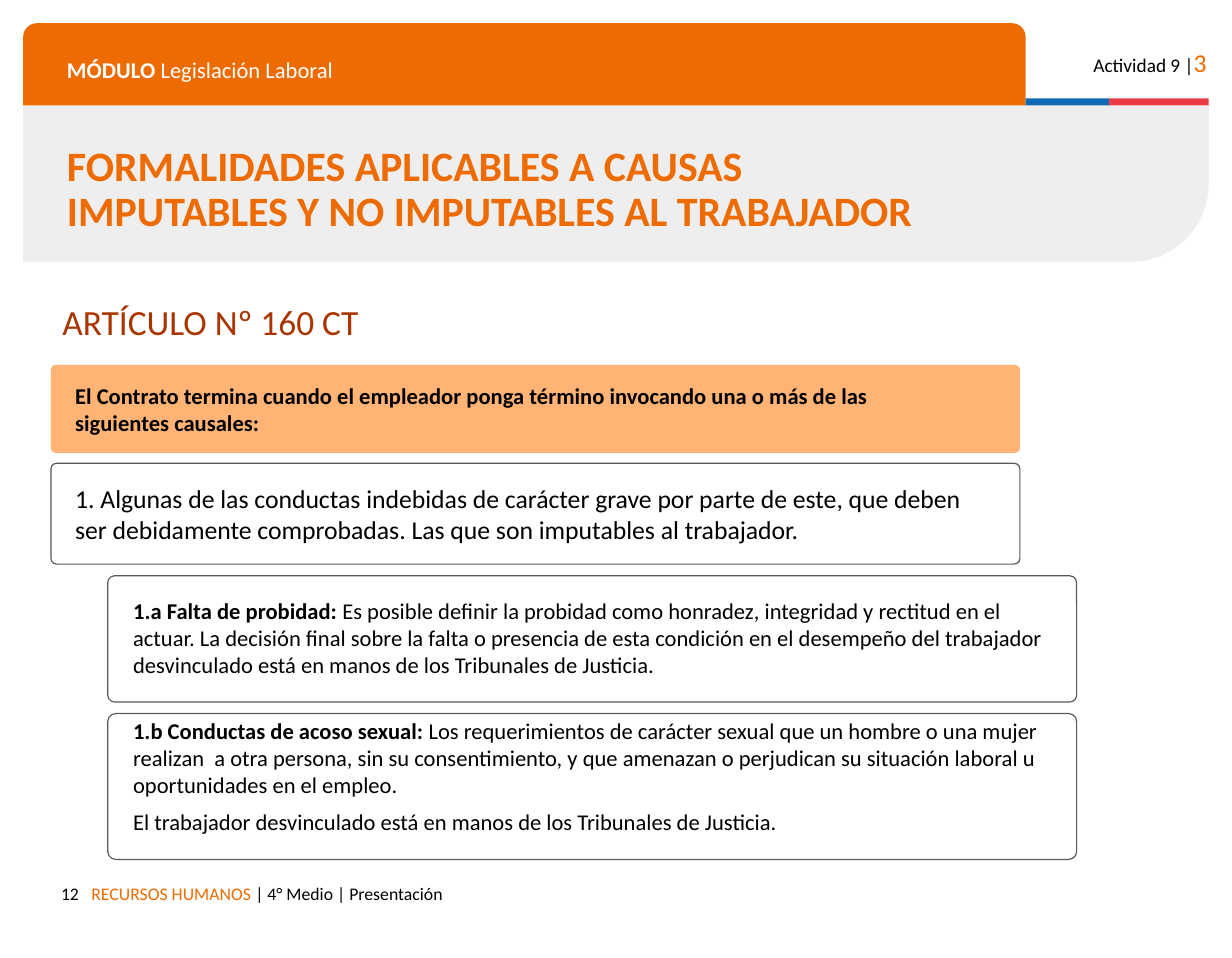
from dataclasses import dataclass

from pptx import Presentation
from pptx.dml.color import RGBColor
from pptx.enum.shapes import MSO_SHAPE
from pptx.enum.text import MSO_ANCHOR, PP_ALIGN
from pptx.util import Inches, Pt

RECT = MSO_SHAPE.RECTANGLE
ROUND = MSO_SHAPE.ROUNDED_RECTANGLE
ROUND_ONE = MSO_SHAPE.ROUND_1_RECTANGLE
ROUND_TOP = MSO_SHAPE.ROUND_2_SAME_RECTANGLE
LEFT, RIGHT = PP_ALIGN.LEFT, PP_ALIGN.RIGHT
TOP, MIDDLE = MSO_ANCHOR.TOP, MSO_ANCHOR.MIDDLE

FONT = "Calibri"
ORANGE, PEACH, BROWN = "ED6B00", "FFB375", "A93501"
BLUE, RED = "0F69B4", "EB3C46"
BLACK, WHITE, GRAY, PALE = "000000", "FFFFFF", "595959", "EEEEEE"
CARD_WIDTH, CARD_ROUNDING = 8.36, 0.055


@dataclass
class Panel:
    kind: MSO_SHAPE
    x: float
    y: float
    w: float
    h: float
    fill: str | None = None
    line: str | None = None
    adj: tuple[float, ...] = ()


@dataclass
class Run:
    text: str
    size: float
    color: str = BLACK
    bold: bool = False


@dataclass
class Label:
    x: float
    y: float
    w: float
    h: float
    paragraphs: list[list[Run]]
    pad: float = 0.05
    align: PP_ALIGN = LEFT
    anchor: MSO_ANCHOR = TOP
    before: float = 0
    spacing: float = 1.0


def card(x: float, y: float, h: float, fill: str | None = None) -> Panel:
    return Panel(ROUND, x, y, CARD_WIDTH, h, fill, None if fill else GRAY, (CARD_ROUNDING,))


HEADER = Panel(ROUND_ONE, 0.2, 0.91, 10.23, 1.35, PALE, adj=(0.5,))

PANELS = [
    Panel(ROUND_TOP, 0.2, 0.2, 8.65, 0.71, ORANGE, adj=(0.167, 0)),
    Panel(RECT, 8.85, 0.85, 0.72, 0.06, BLUE),
    Panel(RECT, 9.57, 0.85, 0.86, 0.06, RED),
    card(0.44, 3.15, 0.76, PEACH),
    card(0.44, 4, 0.87),
    card(0.93, 4.97, 1.09),
    card(0.93, 6.16, 1.26),
]

LABELS = [
    Label(0.48, 0.38, 8.14, 0.35, [[
        Run("MÓDULO ", 14, WHITE, True), Run("Legislación Laboral", 14, WHITE)]], pad=0.1),
    Label(9.23, 0.3, 1.28, 0.38, [[
        Run("Actividad 9 |", 12), Run("3", 16, ORANGE)]], pad=0.1, align=RIGHT),
    Label(0.48, 1.17, 7.66, 0.95, [[
        Run("FORMALIDADES APLICABLES A CAUSAS IMPUTABLES Y NO IMPUTABLES AL TRABAJADOR",
            26, ORANGE, True)]], pad=0.1, anchor=MIDDLE, spacing=0.9),
    Label(0.44, 2.54, 4.58, 0.47, [[Run("ARTÍCULO Nº 160 CT", 22, BROWN)]]),
    Label(0.55, 3.25, 7.72, 0.57, [[
        Run("El Contrato termina cuando el empleador ponga término invocando "
            "una o más de las siguientes causales:", 14, bold=True)]]),
    Label(0.55, 4.12, 8.07, 0.64, [[
        Run("1. Algunas de las conductas indebidas de carácter grave por parte de este, "
            "que deben ser debidamente comprobadas. Las que son imputables al trabajador.", 16)]]),
    Label(1.05, 5.1, 8.05, 0.81, [[
        Run("1.a Falta de probidad: ", 14, bold=True),
        Run("Es posible definir la probidad como honradez, integridad y rectitud en el actuar. "
            "La decisión final sobre la falta o presencia de esta condición en el desempeño del "
            "trabajador desvinculado está en manos de los Tribunales de Justicia.", 14)]]),
    Label(1.05, 6.14, 8.2, 1.21, [
        [Run("1.b Conductas de acoso sexual: ", 14, bold=True),
         Run("Los requerimientos de carácter sexual que un hombre o una mujer realizan  a otra "
             "persona, sin su consentimiento, y que amenazan o perjudican su situación laboral u "
             "oportunidades en el empleo.", 14)],
        [Run("El trabajador desvinculado está en manos de los Tribunales de Justicia.", 14)],
    ], before=6),
    Label(0.2, 7.53, 0.58, 0.29, [[Run("12", 11)]], pad=0.1, align=RIGHT),
    Label(0.69, 7.53, 7.14, 0.38, [[
        Run("RECURSOS HUMANOS ", 11, ORANGE),
        Run("| 4° Medio | Presentación", 11)]], pad=0.1),
]


def rgb(color: str) -> RGBColor:
    return RGBColor.from_string(color)


def add_panel(slide, panel: Panel):
    s = slide.shapes.add_shape(
        panel.kind, Inches(panel.x), Inches(panel.y), Inches(panel.w), Inches(panel.h))
    s.shadow.inherit = False
    for i, value in enumerate(panel.adj):
        s.adjustments[i] = value
    if panel.fill:
        s.fill.solid()
        s.fill.fore_color.rgb = rgb(panel.fill)
    else:
        s.fill.background()
    if panel.line:
        s.line.color.rgb = rgb(panel.line)
        s.line.width = Pt(0.75)
    else:
        s.line.fill.background()
    return s


def add_label(slide, label: Label) -> None:
    s = slide.shapes.add_textbox(
        Inches(label.x), Inches(label.y), Inches(label.w), Inches(label.h))
    tf = s.text_frame
    tf.word_wrap = True
    tf.vertical_anchor = label.anchor
    tf.margin_left = tf.margin_right = Inches(0.1)
    tf.margin_top = tf.margin_bottom = Inches(label.pad)
    for i, runs in enumerate(label.paragraphs):
        p = tf.add_paragraph() if i else tf.paragraphs[0]
        p.alignment = label.align
        p.space_before = Pt(label.before)
        p.line_spacing = label.spacing
        for run in runs:
            r = p.add_run()
            r.text = run.text
            r.font.name = FONT
            r.font.size = Pt(run.size)
            r.font.bold = run.bold
            r.font.color.rgb = rgb(run.color)


def main() -> None:
    """Build the slide on the formalities of dismissal causes."""
    prs = Presentation()
    prs.slide_width, prs.slide_height = Inches(10.63), Inches(8.27)
    slide = prs.slides.add_slide(prs.slide_layouts[6])
    header = add_panel(slide, HEADER)
    header.rotation = 180
    header.element.spPr.xfrm.set("flipH", "1")
    for panel in PANELS:
        add_panel(slide, panel)
    for label in LABELS:
        add_label(slide, label)
    prs.save("out.pptx")


if __name__ == "__main__":
    main()
